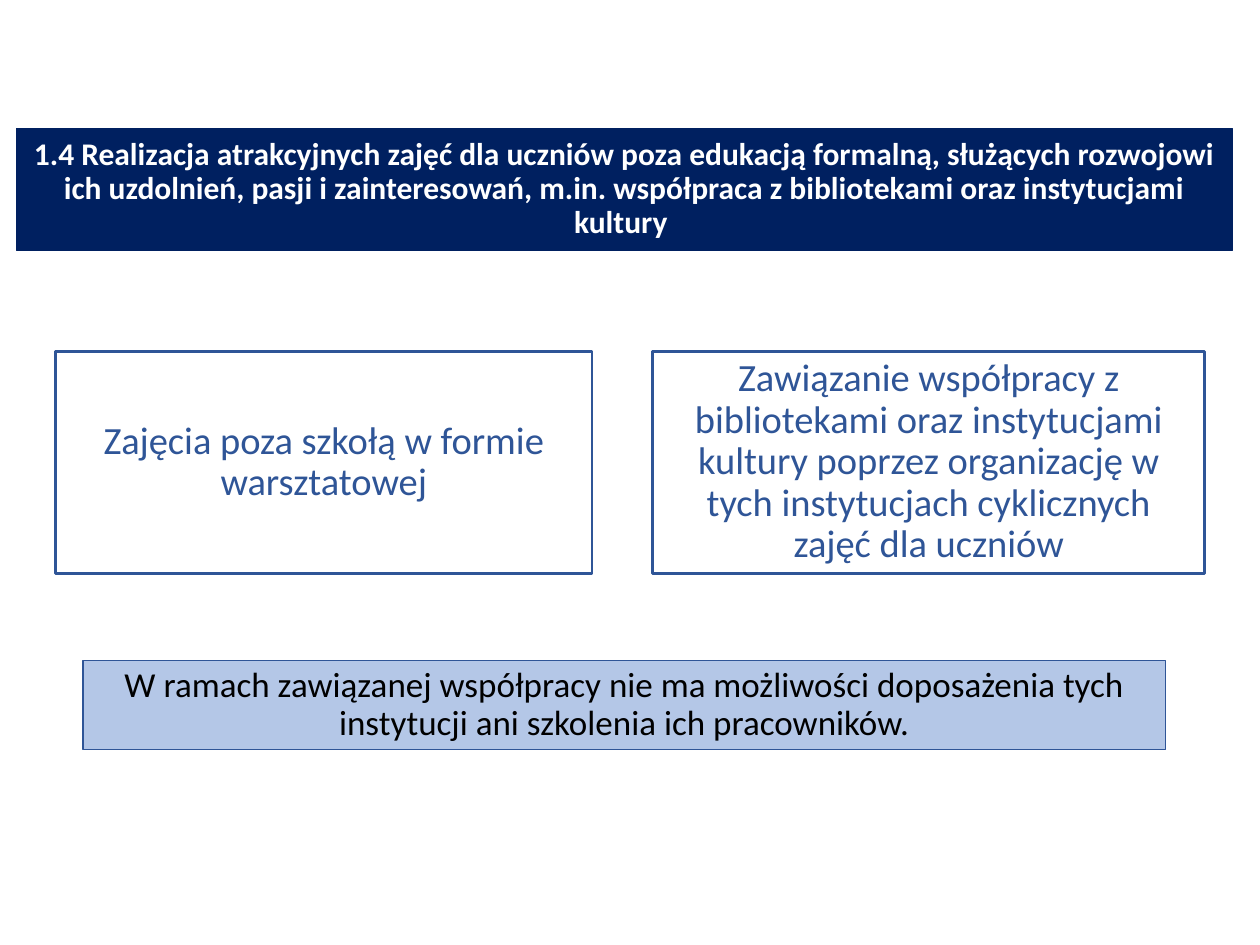
import pptx
import pptx.util
import pptx.dml.color
import pptx.enum.shapes
import pptx.enum.text

Pt = pptx.util.Pt

THEME = {
    "font": "Calibri",
    "navy": "002060",
    "blue": "2F5597",
    "pale": "B4C7E7",
    "white": "FFFFFF",
    "black": "000000",
    "title_size": 18,
    "card_size": 22,
    "note_size": 20,
}

TITLE = (
    "1.4 Realizacja atrakcyjnych zajęć dla uczniów poza edukacją formalną, "
    "służących rozwojowi ich uzdolnień, pasji i zainteresowań, m.in. współpraca "
    "z bibliotekami oraz instytucjami kultury "
)
CARDS = [
    ("Zajęcia poza szkołą w formie warsztatowej", 306.7),
    (
        "Zawiązanie współpracy z bibliotekami oraz instytucjami kultury poprzez "
        "organizację w tych instytucjach cyklicznych zajęć dla uczniów",
        315.4,
    ),
]
NOTE = (
    "W ramach zawiązanej współpracy nie ma możliwości doposażenia tych "
    "instytucji ani szkolenia ich pracowników."
)

CARD_LEFT, CARD_TOP, CARD_HEIGHT, CARD_GAP = 31.7, 200.9, 126.7, 34.6


def rgb(name):
    return pptx.dml.color.RGBColor.from_string(THEME[name])


def add_box(slide, text, *, left, top, width, height, size, color,
            line, line_width=0.75, fill=None, bold=False):
    shape = slide.shapes.add_shape(
        pptx.enum.shapes.MSO_SHAPE.RECTANGLE,
        Pt(left), Pt(top), Pt(width), Pt(height),
    )
    shape.shadow.inherit = False
    if fill:
        shape.fill.solid()
        shape.fill.fore_color.rgb = rgb(fill)
    else:
        shape.fill.background()
    shape.line.color.rgb = rgb(line)
    shape.line.width = Pt(line_width)

    frame = shape.text_frame
    frame.word_wrap = True
    frame.vertical_anchor = pptx.enum.text.MSO_ANCHOR.MIDDLE
    paragraph = frame.paragraphs[0]
    paragraph.alignment = pptx.enum.text.PP_ALIGN.CENTER
    paragraph.line_spacing = 0.9
    run = paragraph.add_run()
    run.text = text
    run.font.name = THEME["font"]
    run.font.size = Pt(THEME[size])
    run.font.bold = bold
    run.font.color.rgb = rgb(color)


def main():
    presentation = pptx.Presentation()
    presentation.slide_width = Pt(720)
    presentation.slide_height = Pt(540)
    slide = presentation.slides.add_slide(presentation.slide_layouts[6])

    add_box(slide, TITLE, left=9.4, top=73.4, width=694.8, height=69.8,
            size="title_size", color="white", line="navy", fill="navy", bold=True)

    left = CARD_LEFT
    for text, width in CARDS:
        add_box(slide, text, left=left, top=CARD_TOP, width=width,
                height=CARD_HEIGHT, size="card_size", color="blue",
                line="blue", line_width=1.5)
        left += width + CARD_GAP

    add_box(slide, NOTE, left=47.5, top=377.3, width=618.5, height=51.1,
            size="note_size", color="black", line="blue", fill="pale")

    presentation.save("out.pptx")


if __name__ == "__main__":
    main()
